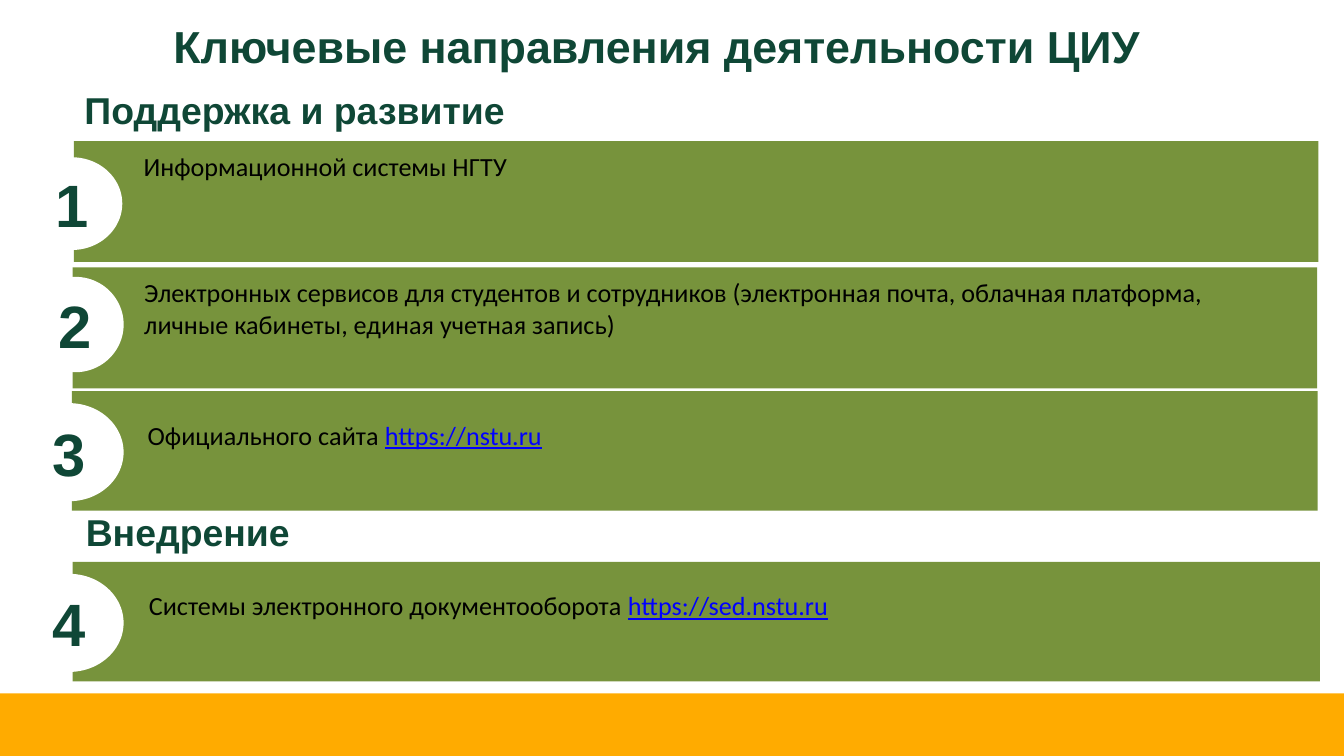
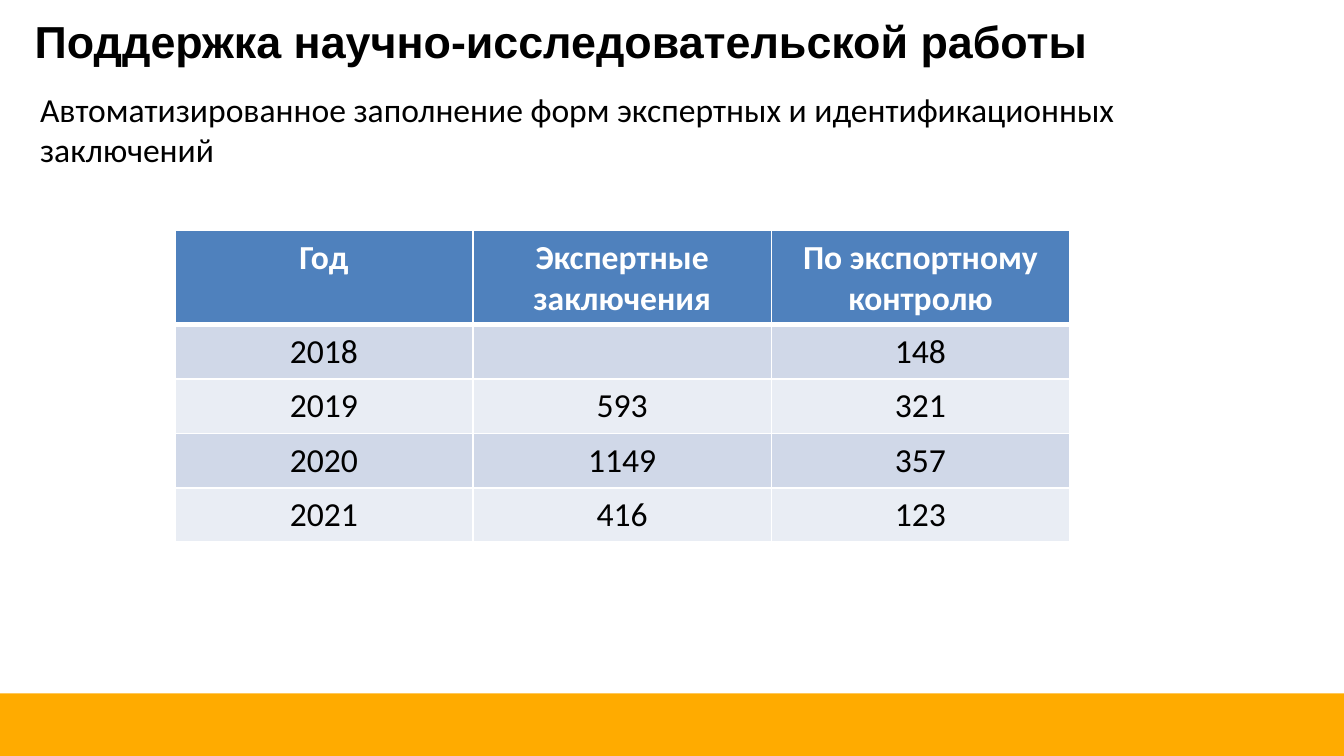
from dataclasses import dataclass

from lxml import etree
from pptx import Presentation
from pptx.dml.color import RGBColor
from pptx.enum.shapes import MSO_SHAPE
from pptx.enum.text import MSO_ANCHOR, MSO_AUTO_SIZE, PP_ALIGN
from pptx.oxml.ns import qn
from pptx.presentation import Presentation as Deck
from pptx.shapes.autoshape import Shape
from pptx.slide import Slide
from pptx.table import _Cell as Cell
from pptx.text.text import TextFrame
from pptx.util import Emu, Pt

RECTANGLE = MSO_SHAPE.RECTANGLE
OVAL = MSO_SHAPE.OVAL
LEFT = PP_ALIGN.LEFT
CENTER = PP_ALIGN.CENTER
TOP = MSO_ANCHOR.TOP
MIDDLE = MSO_ANCHOR.MIDDLE
GROW = MSO_AUTO_SIZE.SHAPE_TO_FIT_TEXT
FIXED = MSO_AUTO_SIZE.NONE

PX_PER_INCH = 200
EMU_PER_PX = 914400 // PX_PER_INCH
EMU_PER_POINT = 12700
SLIDE_WIDTH = 2000
SLIDE_HEIGHT = 1125
FOOTER_HEIGHT = 93

HEADING_FONT = "Arial"
BODY_FONT = "Calibri"
COLORS = {
    "white": "FFFFFF",
    "black": "000000",
    "footer": "FFAB00",
    "heading": "0F4736",
    "bar": "77933C",
    "link": "0000FF",
    "table_header": "4F81BD",
    "row_dark": "D0D8E8",
    "row_light": "E9EDF4",
}


@dataclass(frozen=True)
class Box:
    left: int
    top: int
    width: int
    height: int

    def emu(self) -> tuple[Emu, Emu, Emu, Emu]:
        return px(self.left), px(self.top), px(self.width), px(self.height)


@dataclass(frozen=True)
class Direction:
    number: str
    text: str
    bar: Box
    caption: Box
    badge: Box
    link: str = ""


@dataclass(frozen=True)
class Section:
    title: str
    box: Box


DIRECTIONS = [
    Direction("1", "Информационной системы НГТУ",
              Box(110, 210, 1852, 180), Box(194, 214, 1754, 68), Box(32, 234, 150, 138)),
    Direction("2", "Электронных сервисов для студентов и сотрудников (электронная почта, "
              "облачная платформа, личные кабинеты, единая учетная запись)",
              Box(108, 398, 1852, 180), Box(195, 402, 1746, 114), Box(40, 412, 144, 142)),
    Direction("3", "Официального сайта ",
              Box(107, 582, 1854, 178), Box(200, 614, 1750, 52), Box(22, 600, 162, 146),
              "https://nstu.ru"),
    Direction("4", "Системы электронного документооборота ",
              Box(108, 836, 1856, 178), Box(202, 868, 1752, 68), Box(22, 854, 162, 146),
              "https://sed.nstu.ru"),
]
SECTIONS = [
    Section("Поддержка и развитие", Box(106, 120, 670, 88)),
    Section("Внедрение", Box(108, 748, 348, 88)),
]

TABLE_LEFT = 260
TABLE_TOP = 343
COLUMN_WIDTH = 444
HEADER_HEIGHT = 136
ROW_HEIGHT = 81
TABLE_ROWS = [
    ["Год", "Экспертные заключения", "По экспортному контролю"],
    ["2018", "", "148"],
    ["2019", "593", "321"],
    ["2020", "1149", "357"],
    ["2021", "416", "123"],
]


def px(value: int) -> Emu:
    return Emu(value * EMU_PER_PX)


def color(name: str) -> RGBColor:
    return RGBColor.from_string(COLORS[name])


def write_text(frame: TextFrame, text: str, *, size: int, font: str = BODY_FONT,
               color_name: str = "black", bold: bool = False, underline: bool = False,
               align: PP_ALIGN = LEFT) -> None:
    paragraph = frame.paragraphs[0]
    paragraph.alignment = align
    run = paragraph.add_run()
    run.text = text
    run.font.size = Pt(size)
    run.font.name = font
    run.font.bold = bold
    run.font.underline = underline
    run.font.color.rgb = color(color_name)


def add_text_frame(slide: Slide, box: Box, *, wrap: bool = True,
                   anchor: MSO_ANCHOR = TOP, auto_size: MSO_AUTO_SIZE = GROW) -> TextFrame:
    frame = slide.shapes.add_textbox(*box.emu()).text_frame
    frame.word_wrap = wrap
    frame.auto_size = auto_size
    frame.vertical_anchor = anchor
    return frame


def add_filled_shape(slide: Slide, kind: MSO_SHAPE, box: Box, fill: str) -> Shape:
    shape = slide.shapes.add_shape(kind, *box.emu())
    shape.shadow.inherit = False
    shape.fill.solid()
    shape.fill.fore_color.rgb = color(fill)
    shape.line.fill.background()
    return shape


def add_slide(presentation: Deck) -> Slide:
    slide = presentation.slides.add_slide(presentation.slide_layouts[6])
    footer = Box(0, SLIDE_HEIGHT - FOOTER_HEIGHT, SLIDE_WIDTH, FOOTER_HEIGHT)
    add_filled_shape(slide, RECTANGLE, footer, "footer")
    return slide


def add_title(slide: Slide, text: str, box: Box, *, color_name: str, align: PP_ALIGN = LEFT,
              anchor: MSO_ANCHOR = TOP, auto_size: MSO_AUTO_SIZE = GROW) -> None:
    frame = add_text_frame(slide, box, anchor=anchor, auto_size=auto_size)
    write_text(frame, text, size=24, font=HEADING_FONT, color_name=color_name,
               bold=True, align=align)


def add_direction(slide: Slide, direction: Direction) -> None:
    add_filled_shape(slide, RECTANGLE, direction.bar, "bar")
    caption = add_text_frame(slide, direction.caption)
    write_text(caption, direction.text, size=14)
    if direction.link:
        write_text(caption, direction.link, size=14, color_name="link", underline=True)
    badge = add_filled_shape(slide, OVAL, direction.badge, "white")
    badge.text_frame.vertical_anchor = MIDDLE
    write_text(badge.text_frame, direction.number, size=32, font=HEADING_FONT,
               color_name="heading", bold=True, align=CENTER)


def set_borders(cell: Cell, *, top: int, bottom: int) -> None:
    properties = cell._tc.get_or_add_tcPr()
    widths = {"a:lnL": 1, "a:lnR": 1, "a:lnT": top, "a:lnB": bottom}
    for tag, width in widths.items():
        line = etree.SubElement(properties, qn(tag), w=str(width * EMU_PER_POINT))
        fill = etree.SubElement(line, qn("a:solidFill"))
        etree.SubElement(fill, qn("a:srgbClr"), val=COLORS["white"])


def add_statistics_table(slide: Slide) -> None:
    row_count, column_count = len(TABLE_ROWS), len(TABLE_ROWS[0])
    box = Box(TABLE_LEFT, TABLE_TOP, COLUMN_WIDTH * column_count,
              HEADER_HEIGHT + ROW_HEIGHT * (row_count - 1))
    table = slide.shapes.add_table(row_count, column_count, *box.emu()).table
    for column in table.columns:
        column.width = px(COLUMN_WIDTH)
    for row_index, values in enumerate(TABLE_ROWS):
        is_header = row_index == 0
        table.rows[row_index].height = px(HEADER_HEIGHT if is_header else ROW_HEIGHT)
        band = "row_dark" if row_index % 2 else "row_light"
        for column_index, value in enumerate(values):
            cell = table.cell(row_index, column_index)
            set_borders(cell, top=3 if row_index == 1 else 1, bottom=3 if is_header else 1)
            cell.fill.solid()
            cell.fill.fore_color.rgb = color("table_header" if is_header else band)
            if value:
                write_text(cell.text_frame, value, size=18, bold=is_header, align=CENTER,
                           color_name="white" if is_header else "black")


def build_directions_slide(presentation: Deck) -> None:
    slide = add_slide(presentation)
    add_title(slide, "Ключевые направления деятельности ЦИУ", Box(22, 18, 1910, 100),
              color_name="heading", align=CENTER)
    for direction in DIRECTIONS:
        add_direction(slide, direction)
    for section in SECTIONS:
        frame = add_text_frame(slide, section.box, wrap=False)
        write_text(frame, section.title, size=20, font=HEADING_FONT,
                   color_name="heading", bold=True)


def build_research_slide(presentation: Deck) -> None:
    slide = add_slide(presentation)
    add_title(slide, "Поддержка научно-исследовательской работы", Box(32, 28, 1678, 64),
              color_name="black", anchor=MIDDLE, auto_size=FIXED)
    summary = add_text_frame(slide, Box(40, 122, 1906, 324))
    write_text(summary, "Автоматизированное заполнение форм экспертных и "
               "идентификационных заключений", size=18)
    add_statistics_table(slide)


def main() -> None:
    presentation = Presentation()
    presentation.slide_width = px(SLIDE_WIDTH)
    presentation.slide_height = px(SLIDE_HEIGHT)
    build_directions_slide(presentation)
    build_research_slide(presentation)
    presentation.save("out.pptx")


if __name__ == "__main__":
    main()
